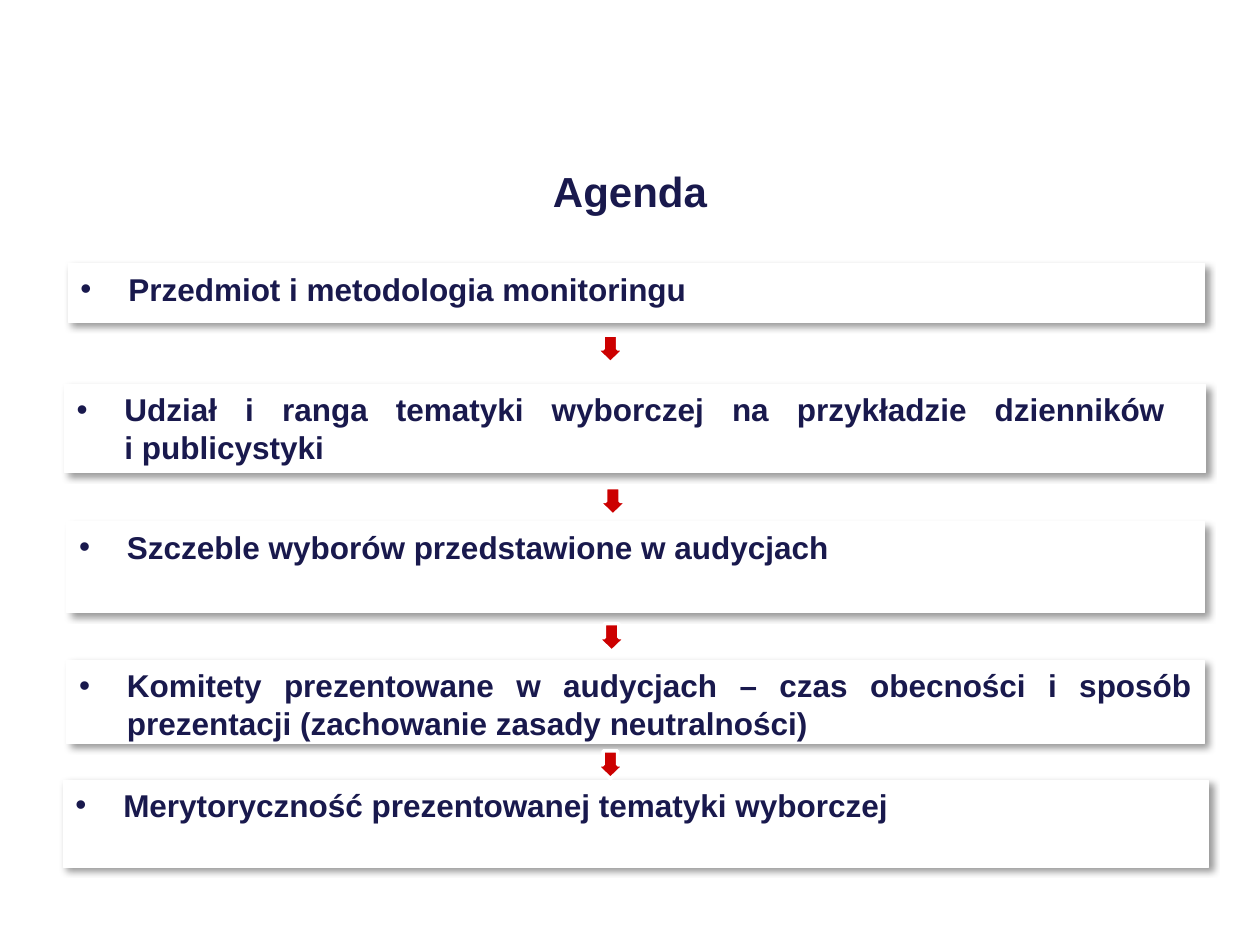
from dataclasses import dataclass

from lxml.etree import SubElement
from pptx import Presentation
from pptx.dml.color import RGBColor
from pptx.enum.shapes import MSO_SHAPE as Shape
from pptx.enum.text import MSO_ANCHOR as Anchor, PP_ALIGN as Align
from pptx.oxml.ns import qn
from pptx.util import Inches, Pt

COLORS = {"navy": "19194D", "red": "CC0000", "white": "FFFFFF", "shadow": "000000"}
FONT = "Arial"
INDENT = Inches(0.38)
ARROW_WIDTH, ARROW_HEIGHT = 0.23, 0.22


@dataclass(frozen=True)
class Topic:
    lines: tuple[str, ...]
    left: float
    top: float
    width: float
    height: float
    align: Align = Align.JUSTIFY


@dataclass(frozen=True)
class Arrow:
    left: float
    top: float


TOPICS = (
    Topic(("Przedmiot i metodologia monitoringu",), 0.54, 2.09, 9.02, 0.47),
    Topic(
        ("Udział i ranga tematyki wyborczej na przykładzie dzienników ", "i publicystyki"),
        0.51, 3.05, 9.06, 0.7,
    ),
    Topic(("Szczeble wyborów przedstawione w audycjach",), 0.53, 4.14, 9.03, 0.72),
    Topic(
        ("Komitety prezentowane w audycjach – czas obecności i sposób "
         "prezentacji (zachowanie zasady neutralności)",),
        0.53, 5.24, 9.03, 0.66,
    ),
    Topic(
        ("Merytoryczność prezentowanej tematyki wyborczej",),
        0.5, 6.19, 9.09, 0.69, Align.LEFT,
    ),
)
ARROWS = (Arrow(4.73, 2.66), Arrow(4.75, 3.87), Arrow(4.74, 4.95), Arrow(4.73, 5.96))


def rgb(name: str) -> RGBColor:
    return RGBColor.from_string(COLORS[name])


def add_run(paragraph, text: str, size: float) -> None:
    run = paragraph.add_run()
    run.text = text
    run.font.name = FONT
    run.font.size = Pt(size)
    run.font.bold = True
    run.font.color.rgb = rgb("navy")


def paint(shape, fill: str, line_width: float) -> None:
    shape.shadow.inherit = False
    shape.fill.solid()
    shape.fill.fore_color.rgb = rgb(fill)
    shape.line.color.rgb = rgb("white")
    shape.line.width = Pt(line_width)


def add_shadow(shape) -> None:
    effects = shape._element.spPr.find(qn("a:effectLst"))
    outer = SubElement(
        effects, qn("a:outerShdw"), blurRad=str(Pt(4)), dist=str(Pt(3)),
        dir=str(45 * 60000), algn="tl", rotWithShape="0",
    )
    color = SubElement(outer, qn("a:srgbClr"), val=COLORS["shadow"])
    SubElement(color, qn("a:alpha"), val="40000")


def add_bullet(paragraph) -> None:
    properties = paragraph._p.get_or_add_pPr()
    properties.set("marL", str(INDENT))
    properties.set("indent", str(-INDENT))
    SubElement(properties, qn("a:buFont"), typeface=FONT)
    SubElement(properties, qn("a:buChar"), char="•")


def add_topic(slide, topic: Topic) -> None:
    box = slide.shapes.add_shape(
        Shape.RECTANGLE, Inches(topic.left), Inches(topic.top),
        Inches(topic.width), Inches(topic.height),
    )
    paint(box, "white", 0.25)
    add_shadow(box)
    frame = box.text_frame
    frame.word_wrap = True
    frame.vertical_anchor = Anchor.TOP
    paragraph = frame.paragraphs[0]
    paragraph.alignment = topic.align
    add_bullet(paragraph)
    for number, line in enumerate(topic.lines):
        if number:
            paragraph.add_line_break()
        add_run(paragraph, line, 18)


def add_arrow(slide, arrow: Arrow) -> None:
    marker = slide.shapes.add_shape(
        Shape.DOWN_ARROW, Inches(arrow.left), Inches(arrow.top),
        Inches(ARROW_WIDTH), Inches(ARROW_HEIGHT),
    )
    paint(marker, "red", 2)


def add_title(slide, text: str) -> None:
    title = slide.shapes.title
    title.left, title.top = Inches(0.5), Inches(0.99)
    title.width, title.height = Inches(9), Inches(1.04)
    title.fill.solid()
    title.fill.fore_color.rgb = rgb("white")
    title.text_frame.vertical_anchor = Anchor.MIDDLE
    paragraph = title.text_frame.paragraphs[0]
    paragraph.alignment = Align.CENTER
    add_run(paragraph, text, 24)


def main() -> None:
    deck = Presentation()
    deck.slide_width, deck.slide_height = Inches(10), Inches(7.5)
    slide = deck.slides.add_slide(deck.slide_layouts.get_by_name("Title Only"))
    add_title(slide, "Agenda")
    for topic in TOPICS:
        add_topic(slide, topic)
    for arrow in ARROWS:
        add_arrow(slide, arrow)
    deck.save("out.pptx")


if __name__ == "__main__":
    main()
